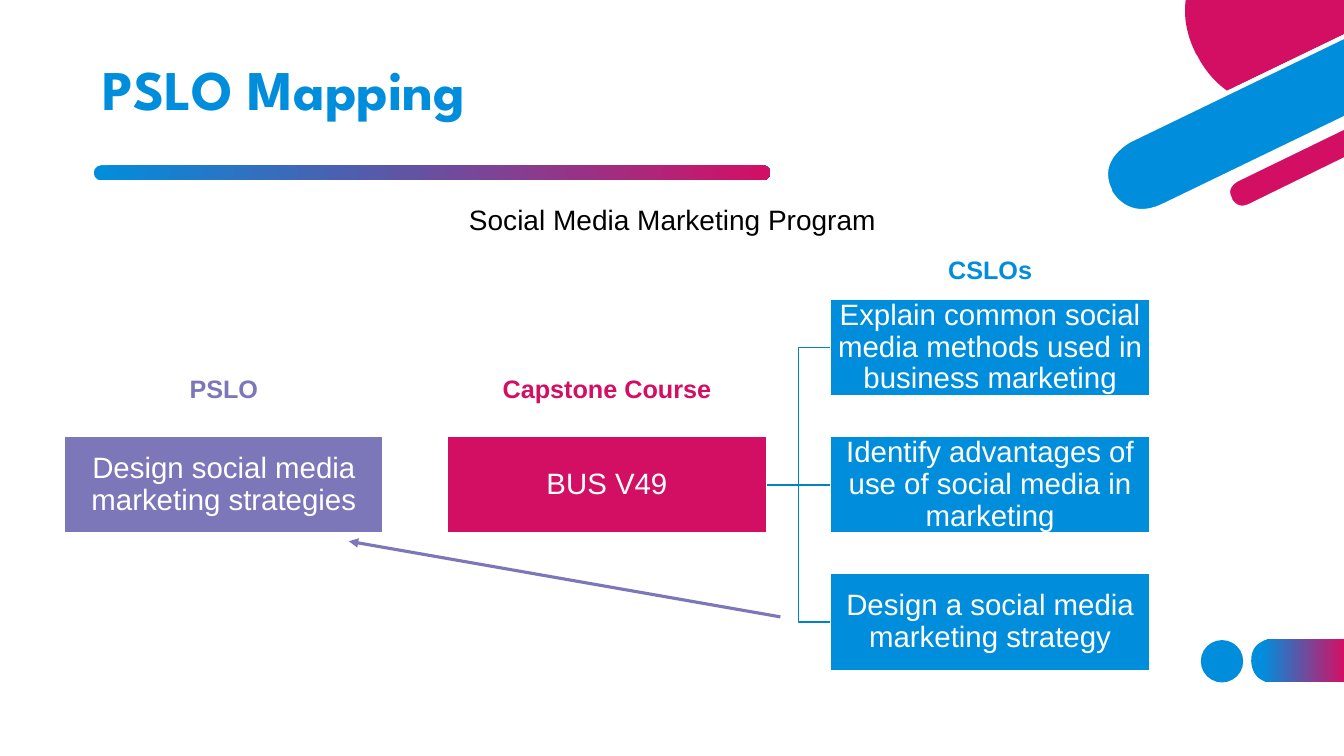
"""Build the PSLO mapping slide for a social media marketing program."""
import pptx
import pptx.util
import pptx.dml.color
import pptx.enum.shapes
import pptx.enum.text
import pptx.oxml
import pptx.oxml.ns

Inches, Pt = pptx.util.Inches, pptx.util.Pt
RGBColor = pptx.dml.color.RGBColor
MSO_SHAPE = pptx.enum.shapes.MSO_SHAPE
MSO_CONNECTOR = pptx.enum.shapes.MSO_CONNECTOR
MSO_ANCHOR = pptx.enum.text.MSO_ANCHOR
PP_ALIGN = pptx.enum.text.PP_ALIGN

BLUE = RGBColor(0x00, 0x8E, 0xDC)
CRIMSON = RGBColor(0xD3, 0x0F, 0x64)
VIOLET = RGBColor(0x7C, 0x77, 0xB9)
TREE_LINE = RGBColor(0x00, 0x81, 0xC8)
WHITE = RGBColor(0xFF, 0xFF, 0xFF)
BLACK = RGBColor(0x00, 0x00, 0x00)

TITLE = "PSLO Mapping"
PROGRAM = "Social Media Marketing Program"
COLUMNS = [
    ("PSLO", VIOLET, ["Design social media marketing strategies"]),
    ("Capstone Course", CRIMSON, ["BUS V49"]),
    ("CSLOs", BLUE, [
        "Explain common social media methods used in business marketing",
        "Identify advantages of use of social media in marketing",
        "Design a social media marketing strategy",
    ]),
]
HEADING_TOPS = [3.65, 3.65, 2.47]

BOX_LEFT, COLUMN_STEP, BOX_W, BOX_H = 0.64, 3.8, 3.16, 0.96
MIDDLE_TOP, ROW_STEP = 4.33, 1.36

CORNER_DISC = [(11.88, 0.56), (11.88, 0.56, 11.97, 0.76, 12.17, 0.9),
               (13.33, 0.34), (13.33, 0), (11.76, 0),
               (11.74, 0.15, 11.76, 0.33, 11.86, 0.53)]
WIDE_BAND = [(11.21, 1.39), (11.21, 1.39, 10.85, 1.57, 11.01, 1.89), (11.01, 1.9),
             (11.01, 1.9, 11.17, 2.22, 11.54, 2.04), (13.36, 1.16), (13.36, 0.35)]
THIN_BAND = [(12.27, 1.78), (12.27, 1.78, 12.13, 1.85, 12.2, 1.97), (12.2, 1.98),
             (12.2, 1.98, 12.26, 2.11, 12.4, 2.04), (13.36, 1.57), (13.36, 1.25)]
CORNER_PILL = [(12.62, 6.77), (13.33, 6.77), (13.33, 6.34), (12.62, 6.34),
               (12.62, 6.34, 12.41, 6.34, 12.41, 6.55), (12.41, 6.56),
               (12.41, 6.56, 12.41, 6.77, 12.62, 6.77)]


def trace(outline, steps=16):
    points = [outline[0]]
    for part in outline[1:]:
        if len(part) == 2:
            points.append(part)
            continue
        knots = [points[-1], part[:2], part[2:4], part[4:]]
        for i in range(1, steps + 1):
            t = i / steps
            weights = [(1 - t) ** 3, 3 * t * (1 - t) ** 2, 3 * t * t * (1 - t), t ** 3]
            points.append(tuple(sum(w * k[axis] for w, k in zip(weights, knots))
                                for axis in (0, 1)))
    return [(Inches(x), Inches(y)) for x, y in points]


def paint(sp, color, edge=None, edge_pt=1):
    sp.shadow.inherit = False
    sp.fill.solid()
    sp.fill.fore_color.rgb = color
    if edge is None:
        sp.line.fill.background()
    else:
        sp.line.color.rgb = edge
        sp.line.width = Pt(edge_pt)


def blend(sp, start):
    paint(sp, BLUE)
    sp.fill.gradient()
    sp.fill.gradient_angle = 0
    for stop, color, place in zip(sp.fill.gradient_stops, (BLUE, CRIMSON), (start, 1)):
        stop.color.rgb = color
        stop.position = place


def add_outline(s, outline):
    points = trace(outline)
    builder = s.shapes.build_freeform(*points[0], scale=1.0)
    builder.add_line_segments(points[1:], close=True)
    return builder.convert_to_shape()


def place(sp, left, top, width, height):
    sp.left, sp.top, sp.width, sp.height = map(Inches, (left, top, width, height))


def write(tf, text, size, color, bold=False, font="Arial", align=PP_ALIGN.CENTER,
          spacing=0.9):
    tf.word_wrap = True
    p = tf.paragraphs[0]
    p.alignment = align
    p.line_spacing = spacing
    r = p.add_run()
    r.text = text
    r.font.name, r.font.size, r.font.bold = font, Pt(size), bold
    r.font.color.rgb = color
    return p


def add_line(s, kind, ends, color, width):
    line = s.shapes.add_connector(kind, *map(Inches, ends))
    line.line.color.rgb = color
    line.line.width = Pt(width)
    line._element.spPr.append(pptx.oxml.parse_xml(
        "<a:effectLst %s/>" % pptx.oxml.ns.nsdecls("a")))
    return line


def add_decoration(s):
    dot = s.shapes.add_shape(MSO_SHAPE.OVAL, *map(Inches, (11.91, 6.35, 0.42, 0.42)))
    paint(dot, BLUE)
    blend(add_outline(s, CORNER_PILL), 0.12)
    paint(add_outline(s, CORNER_DISC), CRIMSON)
    paint(add_outline(s, WIDE_BAND), BLUE, WHITE, 3)
    paint(add_outline(s, THIN_BAND), CRIMSON, WHITE, 3)
    rule = s.shapes.add_shape(MSO_SHAPE.ROUNDED_RECTANGLE,
                              *map(Inches, (0.93, 1.64, 6.71, 0.15)))
    rule.adjustments[0] = 0.5
    blend(rule, 0)


def add_placeholders(s):
    title, body = s.shapes.title, s.placeholders[1]
    place(title, 0.92, 0.4, 9.9, 1.03)
    title.text_frame.vertical_anchor = MSO_ANCHOR.MIDDLE
    write(title.text_frame, TITLE, 40, BLUE, True, "League Spartan", PP_ALIGN.LEFT)
    place(body, 0.92, 2, 11.5, 4.79)
    p = write(body.text_frame, PROGRAM, 20, BLACK)
    p.space_before = Pt(10)
    pPr = p._p.get_or_add_pPr()
    pPr.set("marL", "0")
    pPr.set("indent", "0")
    pPr.append(pptx.oxml.parse_xml("<a:buNone %s/>" % pptx.oxml.ns.nsdecls("a")))


def add_box(s, text, color, left, top):
    box = s.shapes.add_shape(MSO_SHAPE.RECTANGLE, *map(Inches, (left, top, BOX_W, BOX_H)))
    paint(box, color, WHITE)
    tf = box.text_frame
    tf.margin_left = tf.margin_right = tf.margin_top = tf.margin_bottom = Inches(0.01)
    tf.vertical_anchor = MSO_ANCHOR.MIDDLE
    write(tf, text, 21, WHITE)


def add_mapping(s):
    middle = MIDDLE_TOP + BOX_H / 2
    outcome_left = BOX_LEFT + 2 * COLUMN_STEP
    for row in (1, 0, -1):
        kind = MSO_CONNECTOR.ELBOW if row else MSO_CONNECTOR.STRAIGHT
        ends = (outcome_left - COLUMN_STEP + BOX_W, middle,
                outcome_left, middle + row * ROW_STEP)
        add_line(s, kind, ends, TREE_LINE, 1)
    for i, (heading, color, texts) in enumerate(COLUMNS):
        left = BOX_LEFT + i * COLUMN_STEP
        for j, text in enumerate(texts):
            top = MIDDLE_TOP + (j - (len(texts) - 1) / 2) * ROW_STEP
            add_box(s, text, color, left, top)
        label = s.shapes.add_textbox(*map(Inches, (left, HEADING_TOPS[i], BOX_W, 0.4)))
        write(label.text_frame, heading, 18, color, True, spacing=1.0)
    arrow = add_line(s, MSO_CONNECTOR.STRAIGHT, (7.74, 6.12, 3.46, 5.37), VIOLET, 2.25)
    arrow.line._get_or_add_ln().append(pptx.oxml.parse_xml(
        '<a:tailEnd %s type="triangle"/>' % pptx.oxml.ns.nsdecls("a")))


def main():
    prs = pptx.Presentation()
    prs.slide_width, prs.slide_height = Inches(13.33), Inches(7.5)
    s = prs.slides.add_slide(prs.slide_layouts[1])
    add_decoration(s)
    add_placeholders(s)
    add_mapping(s)
    prs.save("out.pptx")


if __name__ == "__main__":
    main()
